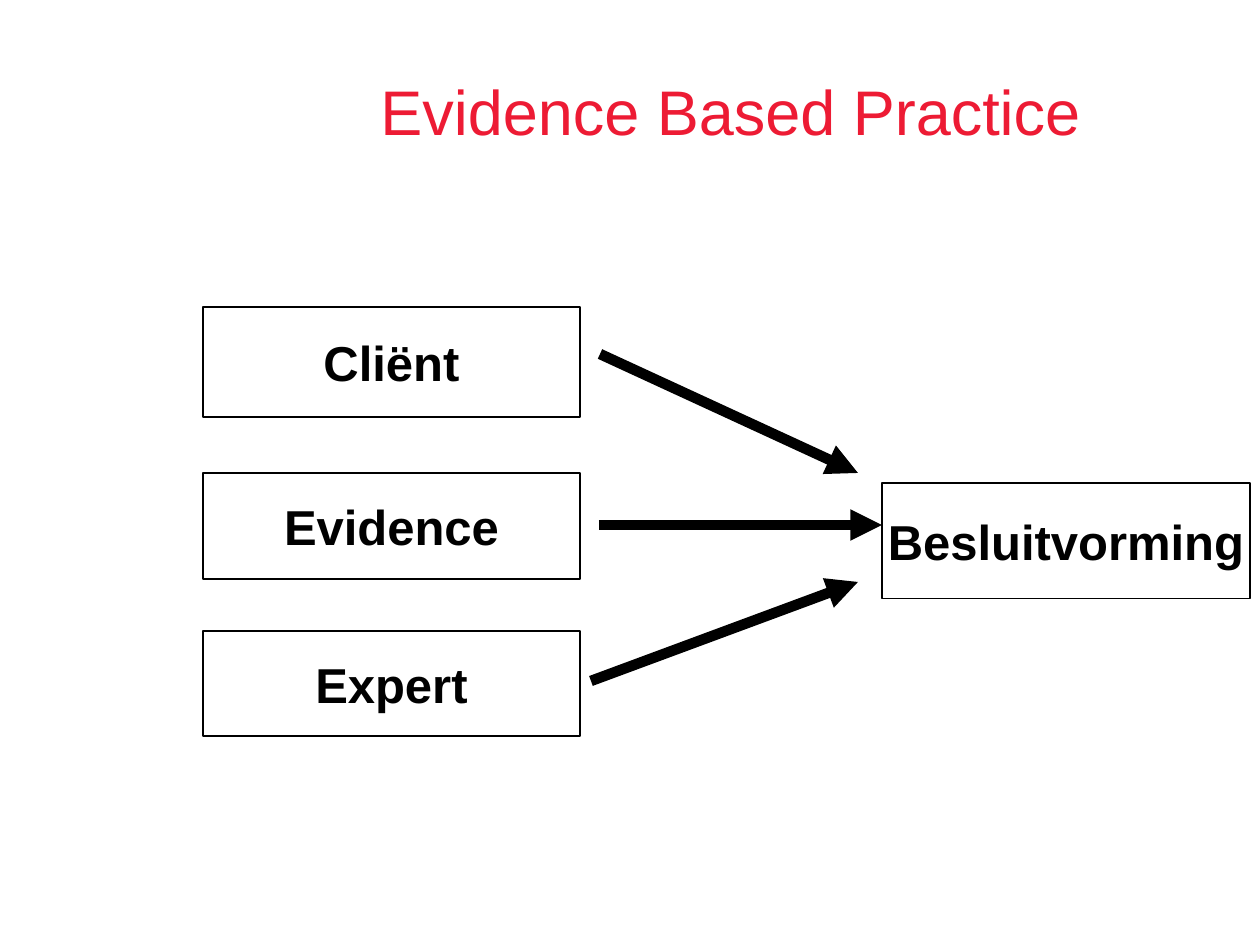
from pptx import Presentation
from pptx.dml.color import RGBColor
from pptx.enum.shapes import MSO_CONNECTOR, MSO_SHAPE
from pptx.enum.text import MSO_ANCHOR, MSO_AUTO_SIZE, PP_ALIGN
from pptx.oxml.ns import qn
from pptx.util import Pt
from lxml.etree import SubElement

PX = 914400 // 126  # EMU per pixel
RED = RGBColor(0xED, 0x1B, 0x34)
BLACK = RGBColor(0, 0, 0)
WHITE = RGBColor(255, 255, 255)


def style(frame, text, size, color, bold=False):
    frame.text = text
    frame.word_wrap = False
    font = frame.paragraphs[0].runs[0].font
    font.name, font.size, font.bold = "Arial", Pt(size), bold
    font.color.rgb = color


def add_title(slide, text, *rect):
    frame = slide.shapes.add_textbox(*(n * PX for n in rect)).text_frame
    style(frame, text, 36, RED)
    frame.auto_size = MSO_AUTO_SIZE.SHAPE_TO_FIT_TEXT


def add_box(slide, text, rect, fill=None):
    box = slide.shapes.add_shape(MSO_SHAPE.RECTANGLE, *(n * PX for n in rect))
    box.shadow.inherit = False
    if fill is None:
        box.fill.background()
    else:
        box.fill.solid()
        box.fill.fore_color.rgb = fill
    box.line.color.rgb = BLACK
    box.line.width = Pt(0.75)
    frame = box.text_frame
    style(frame, text, 28, BLACK, True)
    frame.vertical_anchor = MSO_ANCHOR.MIDDLE
    frame.paragraphs[0].alignment = PP_ALIGN.CENTER


def add_arrow(slide, *ends):
    arrow = slide.shapes.add_connector(
        MSO_CONNECTOR.STRAIGHT, *(n * PX for n in ends))
    arrow.line.color.rgb = BLACK
    arrow.line.width = Pt(6)
    SubElement(arrow.line._get_or_add_ln(), qn("a:tailEnd"), type="triangle")
    SubElement(arrow._element.spPr, qn("a:effectLst"))


def main():
    deck = Presentation()
    deck.slide_width, deck.slide_height = 1260 * PX, 945 * PX
    slide = deck.slides.add_slide(deck.slide_layouts[6])

    # Sources of the decision
    for text, top, height in (("Cliënt", 307, 110),
                              ("Evidence", 473, 106),
                              ("Expert", 631, 105)):
        add_box(slide, text, (203, top, 377, height), WHITE)

    # Outcome
    add_box(slide, "Besluitvorming", (882, 483, 368, 116))

    # Arrows from each source to the outcome
    add_arrow(slide, 600, 354, 858, 473)
    add_arrow(slide, 591, 681, 858, 582)
    add_arrow(slide, 599, 525, 882, 525)

    add_title(slide, "Evidence Based Practice", 368, 66, 732, 89)
    deck.save("out.pptx")


if __name__ == "__main__":
    main()
